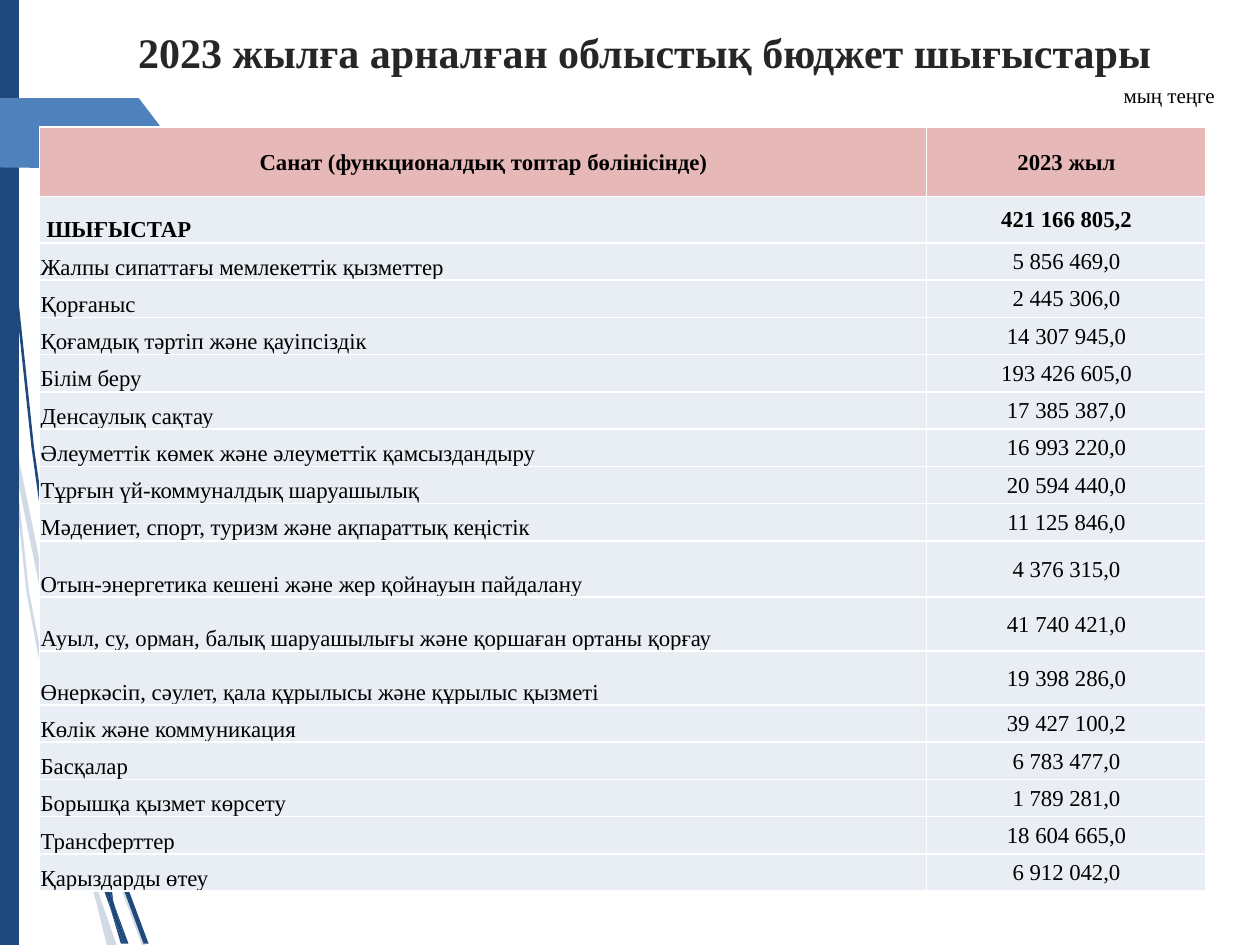
from lxml import etree
from pptx import Presentation
from pptx.dml.color import RGBColor
from pptx.enum.shapes import MSO_SHAPE
from pptx.enum.text import MSO_ANCHOR, MSO_AUTO_SIZE, PP_ALIGN
from pptx.oxml.ns import qn
from pptx.util import Pt

RECTANGLE = MSO_SHAPE.RECTANGLE
TOP, MIDDLE, BOTTOM = MSO_ANCHOR.TOP, MSO_ANCHOR.MIDDLE, MSO_ANCHOR.BOTTOM
LEFT, CENTER = PP_ALIGN.LEFT, PP_ALIGN.CENTER
NO_AUTOFIT = MSO_AUTO_SIZE.NONE

COLORS = {"navy": "1F497D", "blue": "4F81BD", "title": "262626", "text": "000000",
          "header": "E6B9B8", "row": "E9EDF4", "border": "FFFFFF"}
FONT = "Times New Roman"
GRID = Pt(0.72)  # outline coordinates are hundredths of an inch

# Outlines of the ornament: (colour, opacity in percent, points)
PALE_STEMS = [
    [(43, 522), (63, 599), (64, 586), (47, 520), (11, 345), (13, 376)],
    [(69, 607), (66, 596), (66, 610), (92, 694), (113, 751), (116, 751), (95, 692)],
    [(89, 751), (93, 751), (79, 711)],
    [(70, 683), (52, 619), (23, 469), (13, 376), (8, 350), (21, 470), (49, 621),
     (69, 693), (76, 714), (74, 707)],
    [(63, 599), (65, 646), (70, 683), (72, 692), (79, 711), (78, 706), (68, 646),
     (66, 610), (66, 608)],
    [(76, 714), (85, 751), (89, 751)],
    [(72, 692), (70, 683), (74, 707), (76, 714), (89, 751), (79, 711)],
]
DARK_STEMS = [
    [(5, 110), (12, 233), (25, 355), (42, 477), (43, 481), (41, 457), (41, 453),
     (27, 355), (14, 232), (6, 109), (3, 48), (3, 0), (2, 0), (3, 48)],
    [(85, 649), (82, 641), (83, 656), (99, 708), (114, 749), (118, 749), (102, 706)],
    [(83, 691), (73, 657), (54, 556), (48, 505), (43, 477), (51, 557), (70, 659),
     (83, 708), (88, 722), (87, 717)],
    [(100, 749), (102, 749), (91, 719)],
    [(88, 722), (96, 749), (98, 749)],
    [(80, 645), (83, 692), (87, 706), (91, 719), (90, 716), (83, 656), (81, 651)],
    [(87, 706), (82, 691), (87, 717), (88, 722), (98, 749), (100, 749), (91, 719)],
]
ARROW = [(0, 78), (110, 78), (111, 79), (130, 104), (130, 108), (111, 133),
         (110, 134), (0, 133)]

ROWS = [
    ("Санат (функционалдық топтар бөлінісінде)", "2023 жыл", 39.7),
    ("ШЫҒЫСТАР", "421 166 805,2", 26.5),
    ("Жалпы сипаттағы мемлекеттiк қызметтер", "5 856 469,0", 21.3),
    ("Қорғаныс", "2 445 306,0", 21.3),
    ("Қоғамдық тәртіп және қауіпсіздік", "14 307 945,0", 21.3),
    ("Білім беру", "193 426 605,0", 21.3),
    ("Денсаулық сақтау", "17 385 387,0", 21.3),
    ("Әлеуметтiк көмек және әлеуметтiк қамсыздандыру", "16 993 220,0", 21.3),
    ("Тұрғын үй-коммуналдық шаруашылық", "20 594 440,0", 21.3),
    ("Мәдениет, спорт, туризм және ақпараттық кеңістiк", "11 125 846,0", 21.3),
    ("Отын-энергетика кешенi және жер қойнауын пайдалану", "4 376 315,0", 32.2),
    ("Ауыл, су, орман, балық шаруашылығы және қоршаған ортаны қорғау",
     "41 740 421,0", 30.8),
    ("Өнеркәсіп, сәулет, қала құрылысы және құрылыс қызметі", "19 398 286,0", 30.8),
    ("Көлiк және коммуникация", "39 427 100,2", 21.3),
    ("Басқалар", "6 783 477,0", 21.3),
    ("Борышқа қызмет көрсету", "1 789 281,0", 21.3),
    ("Трансферттер", "18 604 665,0", 21.3),
    ("Қарыздарды өтеу", "6 912 042,0", 21.3),
]


def write(frame, text, size, color, bold=False, align=LEFT):
    para = frame.paragraphs[0]
    para.alignment = align
    span = para.add_run()
    span.text = text
    for name, value in {"name": FONT, "size": Pt(size), "bold": bold}.items():
        setattr(span.font, name, value)
    span.font.color.rgb = RGBColor.from_string(COLORS[color])


def paint(shape, color):
    shape.shadow.inherit = False
    shape.fill.solid()
    shape.fill.fore_color.rgb = RGBColor.from_string(COLORS[color])
    shape.line.fill.background()


deck = Presentation()
deck.slide_width, deck.slide_height = Pt(720), Pt(540)
page = deck.slides.add_slide(deck.slide_layouts[5])

# Ornament on the left
outlines = [("navy", 20, stem) for stem in PALE_STEMS]
outlines += [("navy", 100, stem) for stem in DARK_STEMS]
outlines.append(("blue", 100, ARROW))
for color, opacity, points in outlines:
    builder = page.shapes.build_freeform(*points[0], scale=GRID)
    builder.add_line_segments(points[1:], close=True)
    outline = builder.convert_to_shape()
    paint(outline, color)
    if opacity < 100:
        tint = outline.fill._xPr.find(qn("a:solidFill"))[0]
        etree.SubElement(tint, qn("a:alpha"), val=str(opacity * 1000))
    if points is DARK_STEMS[-1]:
        bar = page.shapes.add_shape(RECTANGLE, 0, 0, Pt(10.8), Pt(540))
        paint(bar, "navy")

# Title
title = page.shapes.title
title.left, title.top, title.width, title.height = Pt(16.6), Pt(11.5), Pt(703.4), Pt(61.2)
title.text_frame.auto_size = NO_AUTOFIT
title.text_frame.vertical_anchor = TOP
write(title.text_frame, "2023 жылға арналған облыстық бюджет шығыстары",
      24, "title", bold=True, align=CENTER)

# Expenditure table
table_frame = page.shapes.add_table(len(ROWS), 2, Pt(22.6), Pt(72.6), Pt(666.7), Pt(436.9))
table = table_frame.table
table.horz_banding = False
for column, width in zip(table.columns, (506.9, 159.8)):
    column.width = Pt(width)

for r, (category, amount, height) in enumerate(ROWS):
    table.rows[r].height = Pt(height)
    for c, text in enumerate((category, amount)):
        cell = table.cell(r, c)
        is_label = c == 0 and r > 0
        cell_format = {
            "margin_left": Pt(4 if is_label and r == 1 else 0.7),
            "margin_right": Pt(0.7),
            "margin_top": Pt(0.7),
            "margin_bottom": 0,
            "vertical_anchor": BOTTOM if is_label else MIDDLE,
        }
        for name, value in cell_format.items():
            setattr(cell, name, value)
        properties = cell._tc.get_or_add_tcPr()
        for side in ("a:lnL", "a:lnR", "a:lnT", "a:lnB"):
            border = etree.SubElement(properties, qn(side), w=str(Pt(1)))
            solid = etree.SubElement(border, qn("a:solidFill"))
            etree.SubElement(solid, qn("a:srgbClr"), val=COLORS["border"])
        cell.fill.solid()
        cell.fill.fore_color.rgb = RGBColor.from_string(COLORS["row" if r else "header"])
        write(cell.text_frame, text, 13, "text", bold=r < 2,
              align=LEFT if is_label else CENTER)

# Unit of measure
unit = page.shapes.add_textbox(Pt(635), Pt(43.9), Pt(72.7), Pt(21.6))
unit.text_frame.word_wrap = True
write(unit.text_frame, "мың теңге", 12, "text")

deck.save("out.pptx")
